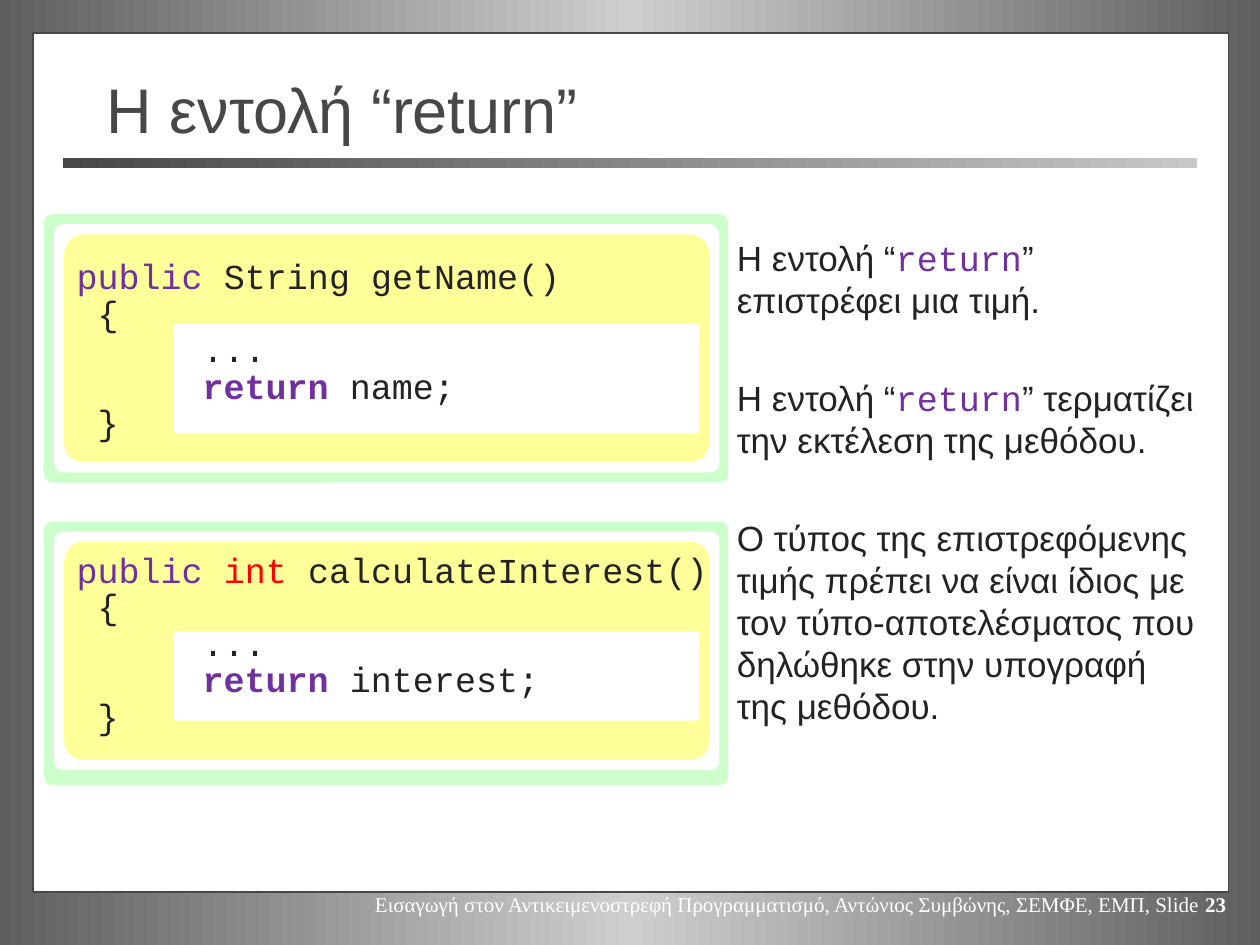
from copy import deepcopy

from pptx import Presentation, util as u
from pptx.dml.color import RGBColor
from pptx.enum import shapes, text
from pptx.oxml.ns import qn

INK, WHITE, GREY = "232323", "FFFFFF", "474747"
PURPLE, RED = "7030A0", "FF0000"
SANS, MONO, SERIF = "Arial", "Courier New", "Times New Roman"


def rgb(value):
    return RGBColor.from_string(value)


class SlideBuilder:
    """Holds the current slide and the style of its elements."""

    def __init__(self, s):
        self.s = s

    def gradient(self, fill, element, colours):
        """Spread the colours evenly from left to right."""
        fill.gradient()
        fill.gradient_angle = 0
        stops = element.find(".//" + qn("a:gsLst"))
        while len(stops) < len(colours):
            stops.append(deepcopy(stops[-1]))
        for i, (stop, colour) in enumerate(zip(fill.gradient_stops, colours)):
            stop.color.rgb = rgb(colour)
            stop.position = i / (len(colours) - 1)

    def background(self, colours):
        self.gradient(self.s.background.fill, self.s._element, colours)

    def box(self, x, y, w, h, fill, line=None, radius=None):
        kind = shapes.MSO_SHAPE.RECTANGLE
        if radius is not None:
            kind = shapes.MSO_SHAPE.ROUNDED_RECTANGLE
        sp = self.s.shapes.add_shape(kind, *map(u.Inches, (x, y, w, h)))
        sp.shadow.inherit = False
        if radius is not None:
            sp.adjustments[0] = radius
        if isinstance(fill, list):
            self.gradient(sp.fill, sp._element, fill)
        else:
            sp.fill.solid()
            sp.fill.fore_color.rgb = rgb(fill)
        if line:
            sp.line.color.rgb = rgb(line)
            sp.line.width = u.Pt(1)
        else:
            sp.line.fill.background()

    def text(self, x, y, w, h, paragraphs, size=20, align=None, spacing=None,
             before=0, wrap=True, anchor=text.MSO_ANCHOR.TOP):
        """Each paragraph is a list of (text, font, colour, bold) runs."""
        tb = self.s.shapes.add_textbox(*map(u.Inches, (x, y, w, h)))
        tf = tb.text_frame
        tf.word_wrap = wrap
        tf.vertical_anchor = anchor
        for i, runs in enumerate(paragraphs):
            p = tf.add_paragraph() if i else tf.paragraphs[0]
            p.alignment = align
            if spacing:
                p.line_spacing = u.Pt(spacing)
            if i:
                p.space_before = u.Pt(before)
            for words, font, colour, bold in runs:
                r = p.add_run()
                r.text = words
                r.font.name, r.font.size = font, u.Pt(size)
                r.font.color.rgb = rgb(colour)
                r.font.bold = bold
        return tf

    def code_frame(self, y, h, method_h, body_h):
        """Nested boxes: border, gap, method and its body."""
        self.box(0.35, y, 5.43, h, "CCFFCC", radius=0.03)
        self.box(0.43, y + 0.08, 5.28, method_h + 0.16, WHITE, radius=0.037)
        self.box(0.51, y + 0.16, 5.12, method_h, "FFFF99", radius=0.087)
        self.box(1.38, y + 0.87, 4.17, body_h, WHITE, radius=0.037)

    def code(self, y, signature, result):
        lines = [
            [(words, MONO, colour, False) for words, colour in signature],
            [(" {", MONO, INK, False)],
            [("...", MONO, INK, False)],
            [("return", MONO, PURPLE, True), (f" {result};", MONO, INK, False)],
            [(" }", MONO, INK, False)],
        ]
        tf = self.text(0.51, y, 5.35, 1.55, lines, spacing=16.9, before=4)
        # Indent the method body
        for p in tf.paragraphs[2:4]:
            pPr = p._p.get_or_add_pPr()
            pPr.set("marL", str(u.Inches(1)))
            pPr.set("indent", "0")


def return_note(ending):
    return [("Η εντολή “", SANS, INK, False), ("return", MONO, PURPLE, False),
            (f"” {ending}", SANS, INK, False)]


def main():
    prs = Presentation()
    prs.slide_width, prs.slide_height = u.Inches(10), u.Inches(7.5)
    b = SlideBuilder(prs.slides.add_slide(prs.slide_layouts[6]))

    # Page frame and footer
    b.background(["5F5F5F", "CECECE", "5F5F5F"])
    b.box(0.26, 0.26, 9.49, 6.82, WHITE, line=GREY)
    footer = ("Εισαγωγή στον Αντικειμενοστρεφή Προγραμματισμό, "
              "Αντώνιος Συμβώνης, ΣΕΜΦΕ, ΕΜΠ, Slide ")
    b.text(2.83, 7.03, 7, 0.3,
           [[(footer, SERIF, WHITE, False), ("23", SERIF, WHITE, True)]],
           size=12, align=text.PP_ALIGN.RIGHT, wrap=False)

    # Title and rule
    b.box(0.5, 1.25, 9, 0.08, [GREY, "C7C7C7"])
    b.text(0.75, 0.55, 8.5, 0.62, [[("Η εντολή “return”", SANS, GREY, False)]],
           size=36, anchor=text.MSO_ANCHOR.MIDDLE)

    # Code examples
    b.code_frame(1.7, 2.13, 1.81, 0.87)
    b.code_frame(4.14, 2.09, 1.73, 0.71)
    b.code(2.07, [("public", PURPLE), (" String getName()", INK)], "name")
    b.code(4.4, [("public ", PURPLE), ("int ", RED),
                 ("calculateInterest()", INK)], "interest")

    # Explanations
    type_note = ("Ο τύπος της επιστρεφόμενης τιμής πρέπει να είναι ίδιος με "
                 "τον τύπο-αποτελέσματος που δηλώθηκε στην υπογραφή της μεθόδου.")
    b.text(5.75, 1.83, 3.92, 4.07,
           [return_note("επιστρέφει μια τιμή."),
            return_note("τερματίζει την εκτέλεση της μεθόδου."),
            [(type_note, SANS, INK, False)]],
           spacing=24, before=32)

    prs.save("out.pptx")


if __name__ == "__main__":
    main()
